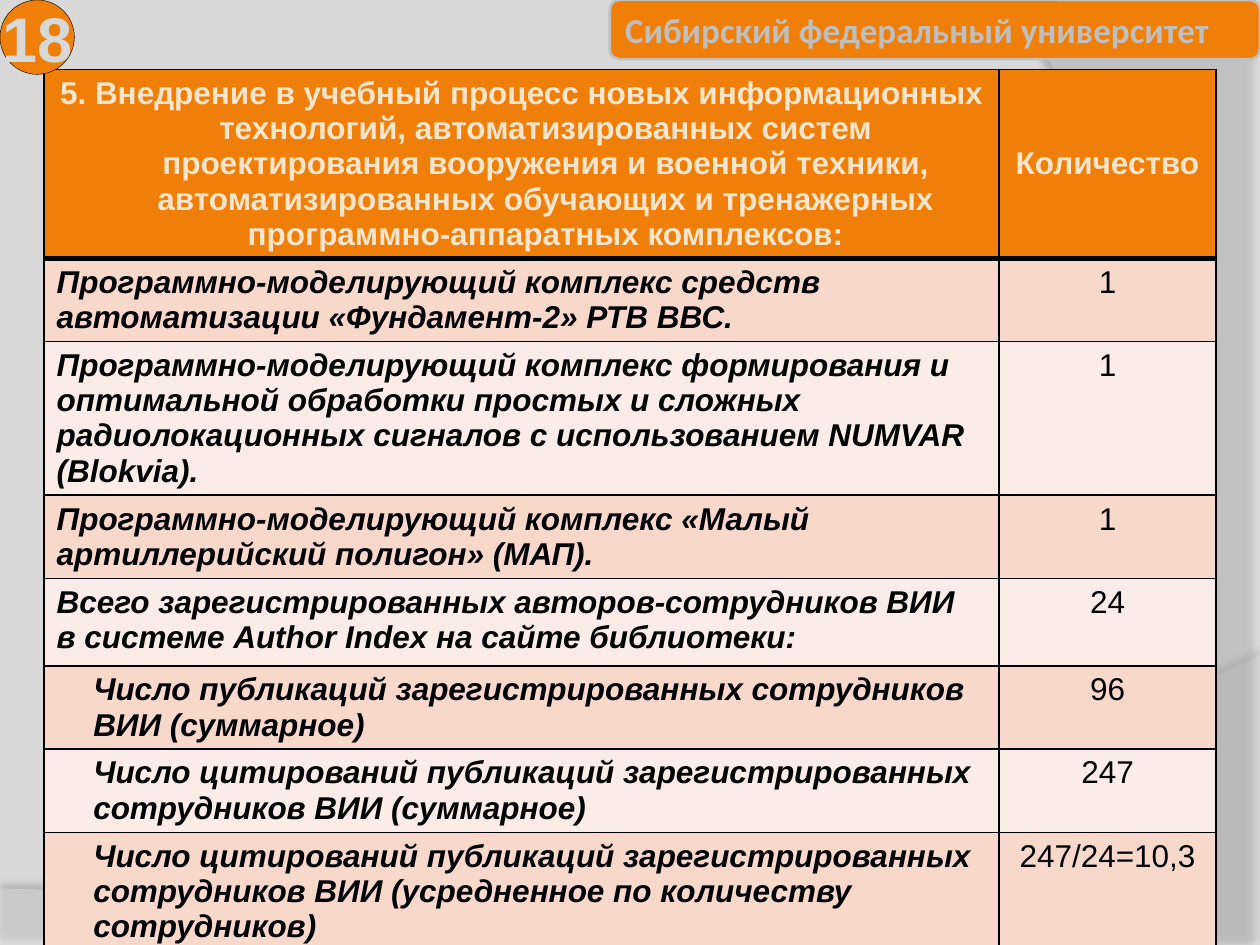
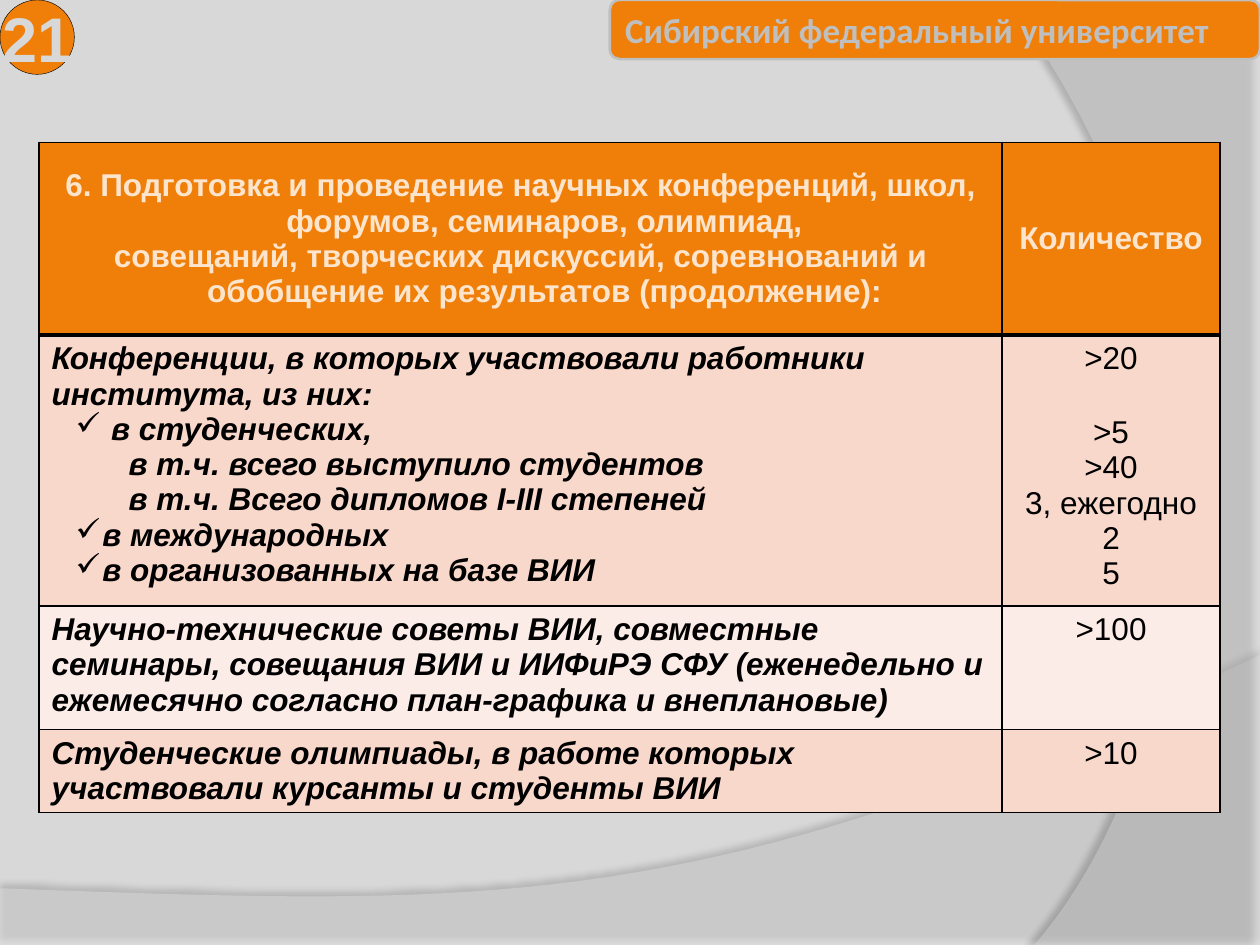
from lxml.etree import SubElement
from pptx import Presentation
from pptx.dml.color import RGBColor
from pptx.enum.shapes import MSO_SHAPE
from pptx.enum.text import MSO_ANCHOR, PP_ALIGN
from pptx.oxml import parse_xml
from pptx.oxml.ns import nsdecls, qn
from pptx.util import Pt

ORANGE, GREY, BLACK = "F07F09", "D8D8D8", "000000"
FRAME, HEAD_TEXT = "BFBFBF", "FDE5CD"
ROW_FILLS = ["F9D8CC", "FCECE7"]
CURVE_STEPS = 40

# Background bands: corner points, Bezier end and controls, fill, opacity,
# then shadow opacity, distance and direction
BANDS = [
    ([(0, 507.6), (0, 540), (720, 540), (720, 374.4)],
     [(402.5, 525), (281.5, 517.7), (0, 507.6)], "E1E1E1", 45, (35, 3.5, 270)),
    ([(720, 1.4), (720, 540), (591.1, 540)],
     [(673.2, 445.7), (733, 216), (576, 0)], "DCDCDC", 40, (45, 4, 180)),
]

SUB = {"left": 20.9}
CHECK = {"left": 29, "indent": -15.3, "bullet": "✓"}
DETAIL = {"left": 44}

# Each cell is a list of (text, paragraph format)
SLIDES = [
    {
        "number": "18", "at": (25.2, 39.6), "widths": (545.8, 123.8),
        "heights": (87, 38, 55, 38, 50, 38, 38, 38),
        "heading": ["5. Внедрение в учебный процесс новых информационных технологий, "
                    "автоматизированных систем проектирования вооружения и военной техники, "
                    "автоматизированных обучающих и тренажерных программно-аппаратных комплексов:"],
        "rows": [
            ([("Программно-моделирующий комплекс средств автоматизации «Фундамент-2» РТВ ВВС.", {})],
             [("1", {})]),
            ([("Программно-моделирующий комплекс формирования и оптимальной обработки простых и "
               "сложных радиолокационных сигналов с использованием NUMVAR (Blokvia).", {})],
             [("1", {})]),
            ([("Программно-моделирующий комплекс «Малый артиллерийский полигон» (МАП).", {})],
             [("1", {})]),
            ([("Всего зарегистрированных авторов-сотрудников ВИИ", {}),
              ("в системе Author Index на сайте библиотеки:", {})],
             [("24", {})]),
            ([("Число публикаций зарегистрированных сотрудников ВИИ (суммарное)", SUB)],
             [("96", {})]),
            ([("Число цитирований публикаций зарегистрированных сотрудников ВИИ (суммарное)", SUB)],
             [("247", {})]),
            ([("Число цитирований публикаций зарегистрированных сотрудников ВИИ "
               "(усредненное по количеству сотрудников)", SUB)],
             [("247/24=10,3", {})]),
        ],
    },
    {
        "number": "21", "at": (22.3, 81.4), "widths": (550.3, 124.6),
        "heights": (110, 154.8, 70.6, 38),
        "heading": ["6. Подготовка и проведение научных конференций, школ, форумов, "
                    "семинаров, олимпиад,",
                    "совещаний, творческих дискуссий, соревнований и обобщение их "
                    "результатов (продолжение):"],
        "rows": [
            ([("Конференции, в которых участвовали работники института, из них:", {}),
              ("в студенческих,", {**CHECK, "left": 34, "indent": -20.3}),
              ("в т.ч. всего выступило студентов", DETAIL),
              ("в т.ч. Всего дипломов I-III степеней", DETAIL),
              ("в международных", CHECK),
              ("в организованных на базе ВИИ", CHECK)],
             [(">20", {}), (">5", {"before": 22}), (">40", {}), ("3, ежегодно", {}),
              ("2", {}), ("5", {})]),
            ([("Научно-технические советы ВИИ, совместные семинары, совещания ВИИ и ИИФиРЭ СФУ "
               "(еженедельно и ежемесячно согласно план-графика и внеплановые)", {})],
             [(">100", {})]),
            ([("Студенческие олимпиады, в работе которых участвовали курсанты и студенты ВИИ", {})],
             [(">10", {})]),
        ],
    },
]


def rgb(color):
    return RGBColor.from_string(color)


def add_text(tf, text, size=18, font="Arial", color=BLACK, bold=False, italic=False,
             align=PP_ALIGN.LEFT, left=0, indent=0, bullet=None, before=0):
    """Write one paragraph, using the first one while it is still empty."""
    p = tf.paragraphs[0] if not tf.paragraphs[0].runs else tf.add_paragraph()
    p.alignment = align
    pPr = p._p.get_or_add_pPr()
    pPr.set("marL", str(Pt(left)))
    pPr.set("indent", str(Pt(indent)))
    if bullet:
        SubElement(pPr, qn("a:buChar")).set("char", bullet)
    if before:
        p.space_before = Pt(before)
    r = p.add_run()
    r.text = text
    r.font.size, r.font.name = Pt(size), font
    r.font.bold, r.font.italic = bold, italic
    r.font.color.rgb = rgb(color)


prs = Presentation()
prs.slide_width, prs.slide_height = Pt(720), Pt(540)

for content in SLIDES:
    s = prs.slides.add_slide(prs.slide_layouts[6])
    s.background.fill.solid()
    s.background.fill.fore_color.rgb = rgb(GREY)

    for corners, (c1, c2, end), color, opacity, (dark, distance, direction) in BANDS:
        outline = list(corners)
        for step in range(1, CURVE_STEPS + 1):
            t = step / CURVE_STEPS
            outline.append(tuple(
                (1 - t) ** 3 * a + 3 * (1 - t) ** 2 * t * b + 3 * (1 - t) * t ** 2 * c + t ** 3 * d
                for a, b, c, d in zip(corners[-1], c1, c2, end)))
        points = [(Pt(x), Pt(y)) for x, y in outline]
        builder = s.shapes.build_freeform(*points[0])
        builder.add_line_segments(points[1:], close=True)
        sp = builder.convert_to_shape()
        sp.fill.solid()
        sp.fill.fore_color.rgb = rgb(color)
        clr = sp._element.spPr.find(qn("a:solidFill"))[0]
        SubElement(clr, qn("a:alpha")).set("val", str(opacity * 1000))
        sp.line.fill.background()
        sp.shadow.inherit = False
        sp._element.spPr.find(qn("a:effectLst")).append(parse_xml(
            f'<a:outerShdw {nsdecls("a")} blurRad="{Pt(4)}" dist="{Pt(distance)}" '
            f'dir="{direction * 60000}" algn="ctr" rotWithShape="0"><a:srgbClr val="{BLACK}">'
            f'<a:alpha val="{dark * 1000}"/></a:srgbClr></a:outerShdw>'))

    # University band
    band = s.shapes.add_shape(MSO_SHAPE.ROUNDED_RECTANGLE, Pt(348.5), Pt(0), Pt(371.5), Pt(33.8))
    band.line.color.rgb, band.line.width = rgb(FRAME), Pt(1.5)
    band.text_frame.word_wrap = True
    add_text(band.text_frame, "Сибирский федеральный университет",
             size=20, font="Calibri", color=FRAME, bold=True)

    # Table
    rows = [([(text, {"left": 27.4, "indent": -27.4}) for text in content["heading"]],
             [("Количество", {})])] + content["rows"]
    left, top = content["at"]
    table = s.shapes.add_table(len(rows), 2, Pt(left), Pt(top), Pt(sum(content["widths"])),
                               Pt(sum(content["heights"]))).table
    for column, width in zip(table.columns, content["widths"]):
        column.width = Pt(width)
    for i, (row, height) in enumerate(zip(rows, content["heights"])):
        table.rows[i].height = Pt(height)
        for j, paragraphs in enumerate(row):
            cell = table.cell(i, j)
            tcPr = cell._tc.get_or_add_tcPr()
            for side in ("L", "R", "T", "B"):
                under_heading = (i, side) in ((0, "B"), (1, "T"))
                tcPr.append(parse_xml(
                    f'<a:ln{side} {nsdecls("a")} w="{Pt(3 if under_heading else 1)}"><a:solidFill>'
                    f'<a:srgbClr val="{BLACK}"/></a:solidFill></a:ln{side}>'))
            cell.fill.solid()
            cell.fill.fore_color.rgb = rgb(ORANGE if i == 0 else ROW_FILLS[(i - 1) % 2])
            cell.vertical_anchor = MSO_ANCHOR.MIDDLE if i == 0 else MSO_ANCHOR.TOP
            for text, options in paragraphs:
                add_text(cell.text_frame, text, color=HEAD_TEXT if i == 0 else BLACK,
                         bold=i == 0 or j == 0, italic=i > 0 and j == 0,
                         align=PP_ALIGN.CENTER if i == 0 or j == 1 else PP_ALIGN.LEFT, **options)

    # Slide number badge
    badge = s.shapes.add_shape(MSO_SHAPE.OVAL, Pt(0), Pt(0), Pt(42.5), Pt(42.5))
    badge.line.color.rgb, badge.line.width = rgb(BLACK), Pt(0.25)
    badge.text_frame.word_wrap = False
    add_text(badge.text_frame, content["number"], size=36, color=GREY, bold=True,
             align=PP_ALIGN.CENTER)

    for sp in (band, badge):
        sp.fill.solid()
        sp.fill.fore_color.rgb = rgb(ORANGE)
        sp.shadow.inherit = False
        sp.text_frame.vertical_anchor = MSO_ANCHOR.MIDDLE

prs.save("out.pptx")
